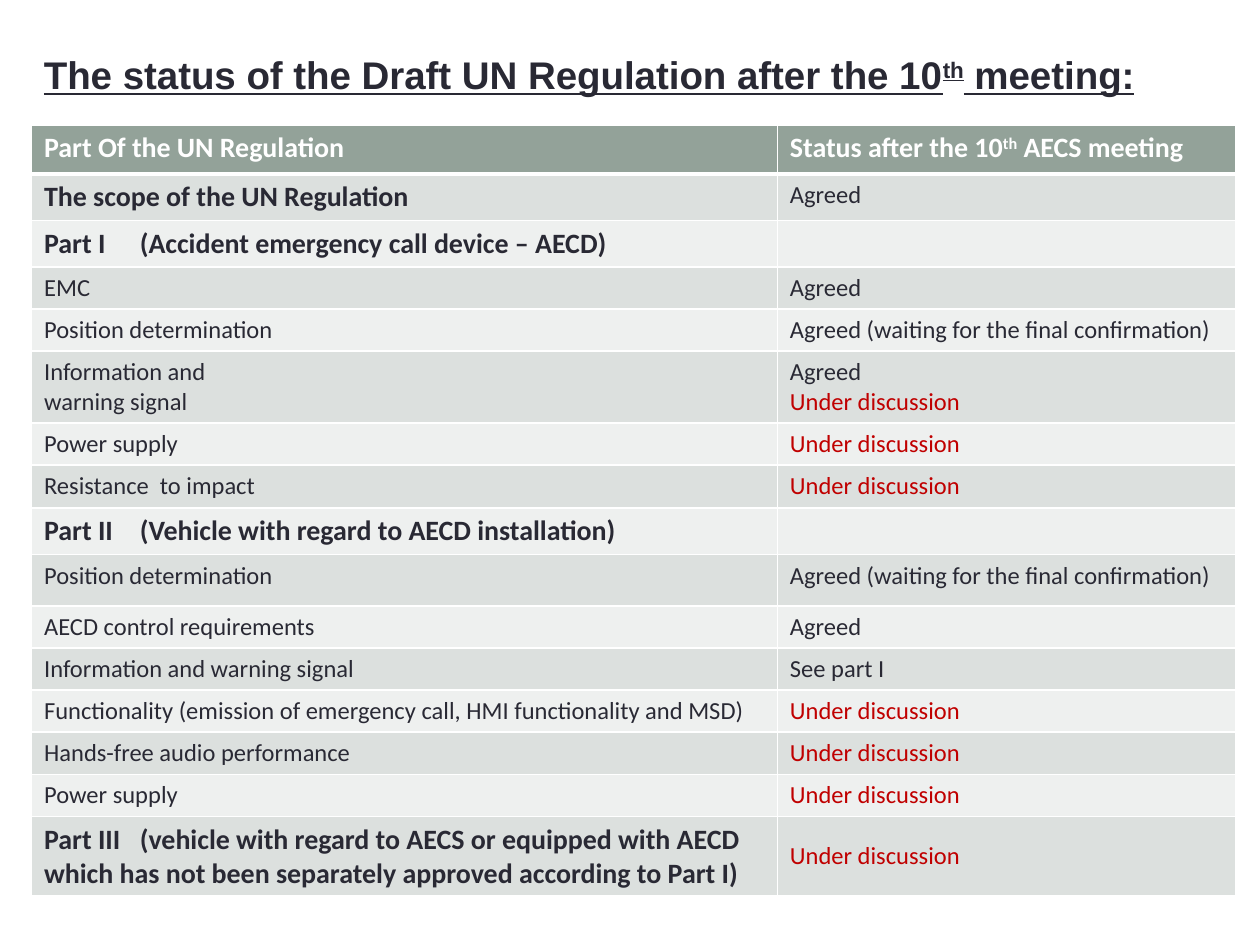
from dataclasses import dataclass

from lxml.etree import SubElement
from pptx import Presentation
from pptx.dml.color import RGBColor
from pptx.enum.text import MSO_ANCHOR as Anchor, MSO_AUTO_SIZE as AutoSize
from pptx.oxml.ns import qn
from pptx.util import Inches, Pt


@dataclass(frozen=True)
class Theme:
    ink: str = "292934"
    alert: str = "C00000"
    white: str = "FFFFFF"
    header: str = "93A299"
    bands: tuple[str, str] = ("DCE0DE", "EEF0EF")
    title_font: str = "Arial"
    body_font: str = "Calibri"
    title_size: int = 22
    heading_size: int = 16
    body_size: int = 14


@dataclass(frozen=True)
class StatusRow:
    topic: str
    status: str = ""
    height: float = 0.33
    heading: bool = False
    anchor: Anchor = Anchor.TOP


THEME = Theme()
AGREED = "Agreed"
WAITING = "Agreed (waiting for the final confirmation)"
OPEN = "Under discussion"
LEFT, WIDTH = 0.25, 9.56
COLUMN_WIDTHS = (5.92, 3.64)
HEADER_HEIGHT = 0.39
PART_TAB = 0.76  # where the description after "Part ..." starts

# Carets enclose superscript text
TITLE = "The status of the Draft UN Regulation after the 10^th^ meeting:"
HEADER = ("Part Of the UN Regulation", "Status after the 10^th^ AECS meeting")
ROWS = [
    StatusRow("The scope of the UN Regulation", AGREED, 0.37, heading=True),
    StatusRow("Part I\t(Accident emergency call device – AECD)", height=0.37, heading=True),
    StatusRow("EMC", AGREED),
    StatusRow("Position determination", WAITING),
    StatusRow("Information and\nwarning signal", f"{AGREED}\n{OPEN}", 0.57),
    StatusRow("Power supply", OPEN),
    StatusRow("Resistance  to impact", OPEN, 0.34),
    StatusRow("Part II\t(Vehicle with regard to AECD installation)", height=0.37, heading=True),
    StatusRow("Position determination", WAITING, 0.41),
    StatusRow("AECD control requirements", AGREED),
    StatusRow("Information and warning signal", "See part I"),
    StatusRow("Functionality (emission of emergency call, HMI functionality and MSD)", OPEN),
    StatusRow("Hands-free audio performance", OPEN),
    StatusRow("Power supply", OPEN),
    StatusRow("Part III\t(vehicle with regard to AECS or equipped with AECD "
              "which has not been separately approved according to Part I)",
              OPEN, 0.63, heading=True, anchor=Anchor.MIDDLE),
]


def write_text(frame, text: str, color: str, **font_format) -> None:
    """Write one paragraph per line, raising the text between carets."""
    for number, line in enumerate(text.split("\n")):
        paragraph = frame.add_paragraph() if number else frame.paragraphs[0]
        if not line:  # an empty cell must not outgrow its row
            size = font_format["size"].pt
            paragraph._p.get_or_add_endParaRPr().set("sz", str(int(size * 100)))
            continue
        if "\t" in line:
            tabs = SubElement(paragraph._p.get_or_add_pPr(), qn("a:tabLst"))
            SubElement(tabs, qn("a:tab"), pos=str(Inches(PART_TAB)), algn="l")
        for index, piece in enumerate(line.split("^")):
            run = paragraph.add_run()
            run.text = piece
            for name, value in font_format.items():
                setattr(run.font, name, value)
            run.font.color.rgb = RGBColor.from_string(THEME.alert if line == OPEN else color)
            if index % 2:
                run._r.get_or_add_rPr().set("baseline", "30000")


def style_cell(cell, fill: str, top: int = 1, bottom: int = 1) -> None:
    """Set white borders (widths in points), then the fill."""
    properties = cell._tc.get_or_add_tcPr()
    for side, width in {"L": 1, "R": 1, "T": top, "B": bottom}.items():
        line = SubElement(properties, qn(f"a:ln{side}"), w=str(Pt(width)))
        SubElement(SubElement(line, qn("a:solidFill")), qn("a:srgbClr"), val=THEME.white)
    cell.fill.solid()
    cell.fill.fore_color.rgb = RGBColor.from_string(fill)


def add_title(slide) -> None:
    shape = slide.shapes.add_textbox(Inches(LEFT), Inches(0.36), Inches(WIDTH), Inches(0.47))
    frame = shape.text_frame
    frame.word_wrap = True
    frame.auto_size = AutoSize.SHAPE_TO_FIT_TEXT
    write_text(frame, TITLE, THEME.ink, name=THEME.title_font,
               size=Pt(THEME.title_size), bold=True, underline=True)


def add_status_table(slide) -> None:
    heights = [HEADER_HEIGHT, *(row.height for row in ROWS)]
    table = slide.shapes.add_table(
        len(heights), len(COLUMN_WIDTHS), Inches(LEFT), Inches(0.99),
        Inches(WIDTH), Inches(sum(heights))).table
    for column, width in zip(table.columns, COLUMN_WIDTHS):
        column.width = Inches(width)
    for table_row, height in zip(table.rows, heights):
        table_row.height = Inches(height)

    # Header row
    for cell, text in zip(table.rows[0].cells, HEADER):
        style_cell(cell, THEME.header, bottom=3)
        write_text(cell.text_frame, text, THEME.white, name=THEME.body_font,
                   size=Pt(THEME.heading_size), bold=True)

    # Banded body rows
    for index, row in enumerate(ROWS):
        topic_cell, status_cell = table.rows[index + 1].cells
        for cell, text, bold in ((topic_cell, row.topic, row.heading),
                                 (status_cell, row.status, False)):
            style_cell(cell, THEME.bands[index % 2], top=1 if index else 3)
            size = THEME.heading_size if bold else THEME.body_size
            write_text(cell.text_frame, text, THEME.ink, name=THEME.body_font,
                       size=Pt(size), bold=bold)
        status_cell.vertical_anchor = row.anchor


def main() -> None:
    presentation = Presentation()
    presentation.slide_width, presentation.slide_height = Inches(10), Inches(7.5)
    slide = presentation.slides.add_slide(presentation.slide_layouts[6])
    add_title(slide)
    add_status_table(slide)
    presentation.save("out.pptx")


if __name__ == "__main__":
    main()
